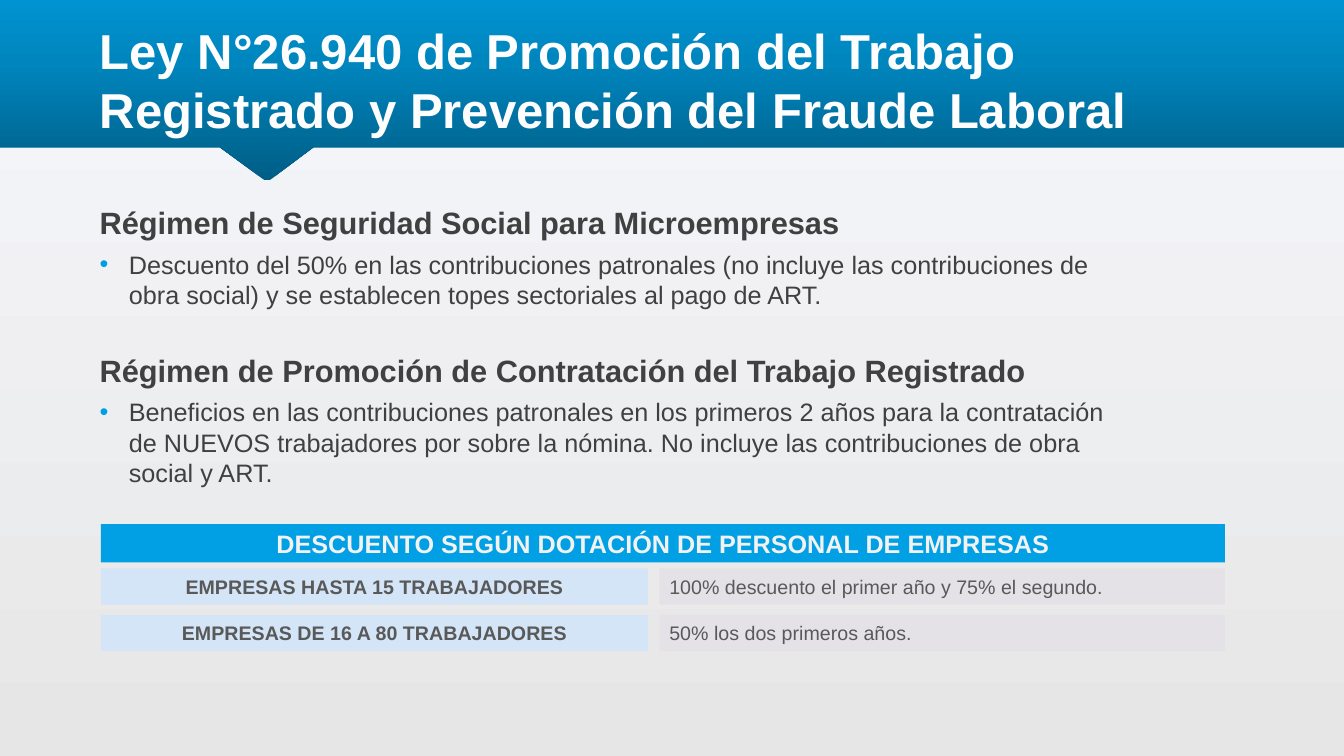
from copy import deepcopy

from pptx import Presentation
from pptx.dml.color import RGBColor
from pptx.enum.shapes import MSO_SHAPE
from pptx.enum.text import MSO_ANCHOR, MSO_AUTO_SIZE, PP_ALIGN
from pptx.oxml.ns import qn
from pptx.util import Inches, Pt
from lxml import etree

RECTANGLE = MSO_SHAPE.RECTANGLE
MIDDLE = MSO_ANCHOR.MIDDLE
NO_AUTOFIT = MSO_AUTO_SIZE.NONE
LEFT, CENTER = PP_ALIGN.LEFT, PP_ALIGN.CENTER

FONT = "Arial"
NEAR_WHITE = RGBColor(0xFE, 0xFE, 0xFE)
DARK_GRAY = RGBColor(0x40, 0x40, 0x40)
MID_GRAY = RGBColor(0x59, 0x59, 0x59)
HEADER_TEXT = RGBColor(0xF2, 0xF2, 0xF2)
BRIGHT_BLUE = RGBColor(0x01, 0x9F, 0xE3)
PALE_BLUE = RGBColor(0xD4, 0xE5, 0xF7)
PALE_GRAY = RGBColor(0xE4, 0xE2, 0xE7)
BACKGROUND_STOPS = [(0.03, RGBColor(0xF6, 0xF7, 0xFB)), (1, RGBColor(0xE6, 0xE6, 0xE6))]
BANNER_STOPS = [
    (0, RGBColor(0x00, 0x5E, 0x86)),
    (0.67, RGBColor(0x00, 0x86, 0xBF)),
    (1, RGBColor(0x00, 0x93, 0xD1)),
]

WIDTH, HEIGHT = 13.33, 7.5
BANNER_BOTTOM = 1.46


def paint_stops(fill, angle, stops):
    fill.gradient_angle = angle
    for stop, (position, color) in zip(fill.gradient_stops, stops):
        stop.position = position
        stop.color.rgb = color


def format_text(paragraph, size, color, bold, alignment=LEFT):
    paragraph.alignment = alignment
    for run in paragraph.runs:
        run.font.name = FONT
        run.font.size = Pt(size)
        run.font.bold = bold
        run.font.color.rgb = color


presentation = Presentation()
presentation.slide_width = Inches(WIDTH)
presentation.slide_height = Inches(HEIGHT)
slide = presentation.slides.add_slide(presentation.slide_layouts[5])

background = slide.background.fill
background.gradient()
paint_stops(background, 270, BACKGROUND_STOPS)

BANNER_OUTLINE = [
    (0, BANNER_BOTTOM), (2.18, BANNER_BOTTOM), (2.6, 1.77), (2.63, 1.79),
    (2.67, 1.79), (2.7, 1.77), (3.11, BANNER_BOTTOM), (WIDTH, BANNER_BOTTOM), (WIDTH, 0),
]
builder = slide.shapes.build_freeform(0, 0, scale=1.0)
builder.add_line_segments([(Inches(x), Inches(y)) for x, y in BANNER_OUTLINE])
banner = builder.convert_to_shape()
banner.shadow.inherit = False
banner.line.fill.background()
banner.fill.gradient()
stop_list = next(banner._element.iter(qn("a:gsLst")))
stop_list.append(deepcopy(stop_list[0]))
paint_stops(banner.fill, 90, BANNER_STOPS)

title = slide.shapes.title
title._element.addprevious(banner._element)
title.left, title.top = Inches(0.89), Inches(0.19)
title.width, title.height = Inches(WIDTH - 0.89), Inches(1.2)
title.text_frame.text = (
    "Ley N°26.940 de Promoción del Trabajo\n"
    "Registrado y Prevención del Fraude Laboral"
)
title.text_frame.auto_size = NO_AUTOFIT
title.text_frame.vertical_anchor = MIDDLE
for paragraph in title.text_frame.paragraphs:
    format_text(paragraph, 35, NEAR_WHITE, True)
    paragraph.space_before = Pt(0)

REGIMES = [
    ("Régimen de Seguridad Social para Microempresas",
     "Descuento del 50% en las contribuciones patronales (no incluye las contribuciones "
     "de obra social) y se establecen topes sectoriales al pago de ART."),
    ("Régimen de Promoción de Contratación del Trabajo Registrado",
     "Beneficios en las contribuciones patronales en los primeros 2 años para la "
     "contratación de NUEVOS trabajadores por sobre la nómina. No incluye las "
     "contribuciones de obra social y ART."),
]
body = slide.shapes.add_textbox(Inches(0.89), Inches(1.97), Inches(10.34), Inches(2.99))
body.text_frame.word_wrap = True
body.text_frame.text = "\n".join(text for regime in REGIMES for text in regime)
for index, paragraph in enumerate(body.text_frame.paragraphs):
    if index % 2 == 0:
        format_text(paragraph, 22, DARK_GRAY, True)
        paragraph.space_before = Pt(30 if index else 0)
        paragraph.space_after = Pt(6)
    else:
        format_text(paragraph, 18, DARK_GRAY, False)
        properties = paragraph._p.get_or_add_pPr()
        properties.set("marL", str(Inches(0.29)))
        properties.set("indent", str(-Inches(0.29)))
        bullet_color = etree.SubElement(properties, qn("a:buClr"))
        etree.SubElement(bullet_color, qn("a:srgbClr")).set("val", "009FE3")
        etree.SubElement(properties, qn("a:buFont")).set("typeface", FONT)
        etree.SubElement(properties, qn("a:buChar")).set("char", "•")

TABLE_LEFT, TABLE_WIDTH = 1, 11.15
LABEL_WIDTH, VALUE_LEFT = 5.43, 6.54
VALUE_WIDTH = TABLE_LEFT + TABLE_WIDTH - VALUE_LEFT
FIRST_ROW, ROW_PITCH, ROW_HEIGHT = 5.64, 0.46, 0.36
DISCOUNTS = [
    ("EMPRESAS HASTA 15 TRABAJADORES", "100% descuento el primer año y 75% el segundo."),
    ("EMPRESAS DE 16 A 80 TRABAJADORES", "50% los dos primeros años."),
]
bars = [("DESCUENTO SEGÚN DOTACIÓN DE PERSONAL DE EMPRESAS", TABLE_LEFT, 5.2, TABLE_WIDTH,
         0.38, BRIGHT_BLUE, 18, HEADER_TEXT, True, CENTER)]
for row, (label, value) in enumerate(DISCOUNTS):
    top = FIRST_ROW + row * ROW_PITCH
    bars.append((label, TABLE_LEFT, top, LABEL_WIDTH, ROW_HEIGHT,
                 PALE_BLUE, 14, MID_GRAY, True, CENTER))
    bars.append((value, VALUE_LEFT, top, VALUE_WIDTH, ROW_HEIGHT,
                 PALE_GRAY, 14, MID_GRAY, False, LEFT))

for text, left, top, width, height, fill, size, color, bold, alignment in bars:
    bar = slide.shapes.add_shape(
        RECTANGLE, Inches(left), Inches(top), Inches(width), Inches(height))
    bar.shadow.inherit = False
    bar.fill.solid()
    bar.fill.fore_color.rgb = fill
    bar.line.fill.background()
    bar.text_frame.word_wrap = True
    bar.text_frame.vertical_anchor = MIDDLE
    bar.text_frame.text = text
    format_text(bar.text_frame.paragraphs[0], size, color, bold, alignment)

presentation.save("out.pptx")
